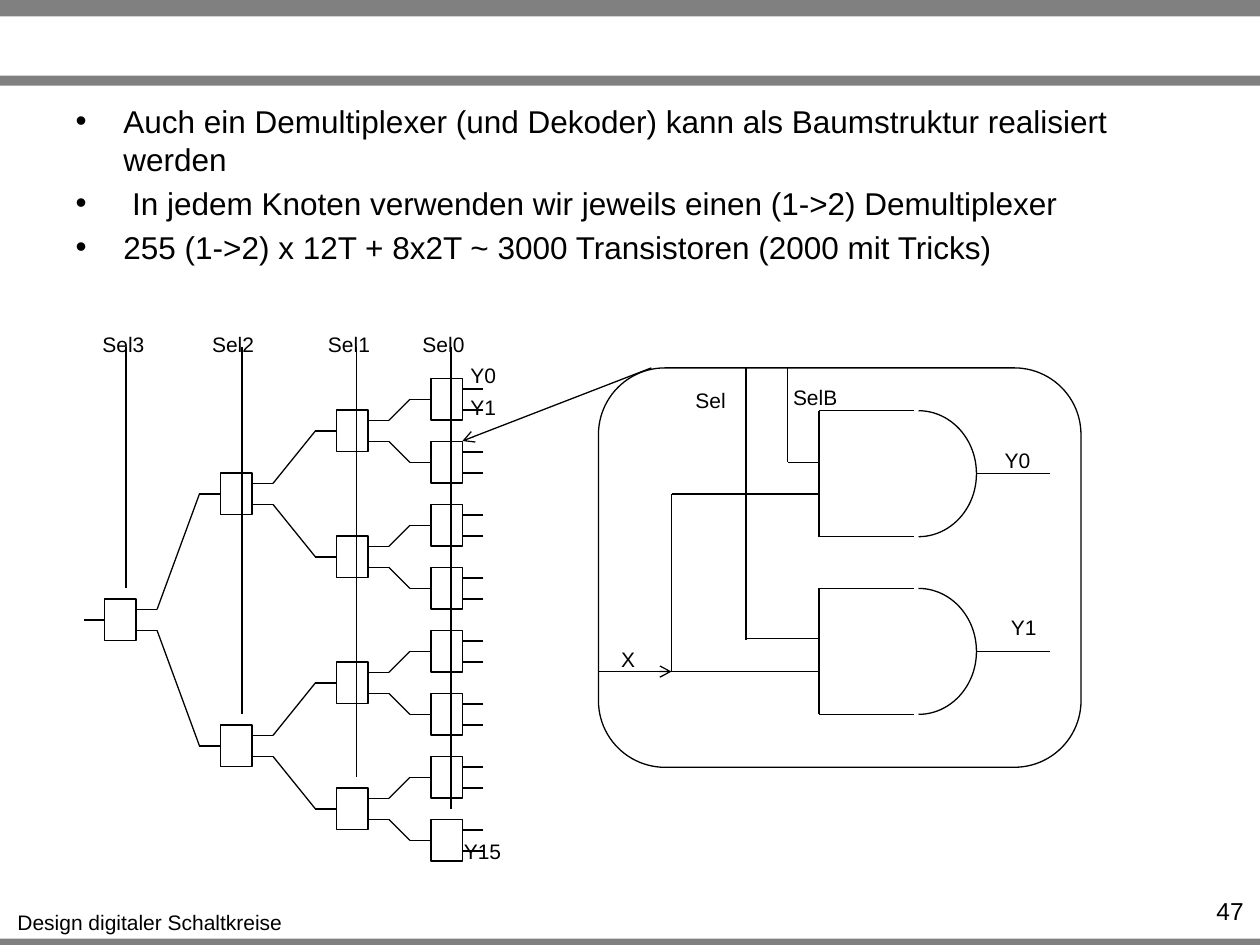
from typing import NamedTuple, Optional

from lxml import etree
from pptx import Presentation
from pptx import util as u
from pptx.dml.color import RGBColor
from pptx.enum import shapes, text
from pptx.oxml.ns import qn

BLACK, GREY = "000000", "808080"
FONT = "Arial"
NODE_WIDTH, NODE_HEIGHT = 0.25, 0.33
STUB = 1 / 6        # length of the short wires at a node
PORT_OFFSET = 1 / 12  # distance of the outputs from the node's middle
TREE_MIDDLE, TREE_SPAN = 4.92, 4.0
SELECT_TOP = 2.75


class Level(NamedTuple):
    """One column of the demultiplexer tree and its select line."""
    left: float
    select_x: float
    select_bottom: float


class Label(NamedTuple):
    words: str
    left: float
    top: float
    width: float


class Wire(NamedTuple):
    x1: float
    y1: float
    x2: float
    y2: float
    arrow: bool = False


LEVELS = [
    Level(0.83, 1.00, 4.67),
    Level(1.75, 1.92, 5.67),
    Level(2.67, 2.83, 6.17),
    Level(3.42, 3.58, 6.42),
]
LABELS = [
    Label("Sel0", 3.25, 2.58, 0.54),
    Label("Sel1", 2.5, 2.58, 0.54),
    Label("Sel2", 1.58, 2.58, 0.54),
    Label("Sel3", 0.71, 2.58, 0.54),
    Label("Y0", 3.63, 2.83, 0.41),
    Label("Y1", 3.63, 3.08, 0.41),
    Label("Y15", 3.58, 6.61, 0.5),
    Label("Sel", 5.42, 3.03, 0.44),
    Label("SelB", 6.19, 3.0, 0.56),
    Label("X", 4.83, 5.08, 0.31),
    Label("Y0", 7.87, 3.5, 0.41),
    Label("Y1", 7.92, 4.83, 0.41),
    Label("Design digitaler Schaltkreise", 0.03, 7.17, 2.32),
]
GATE_TOPS = [3.26, 4.67]
DETAIL_WIRES = [
    Wire(5.92, 5.07, 6.5, 5.07),           # Sel to the lower gate
    Wire(5.92, 5.08, 5.92, 2.92),
    Wire(6.25, 3.67, 6.25, 2.92),          # SelB to the upper gate
    Wire(6.5, 3.67, 6.25, 3.67),
    Wire(4.75, 5.33, 5.33, 5.33, True),    # X to both gates
    Wire(5.33, 5.33, 6.5, 5.33),
    Wire(5.33, 3.92, 5.33, 5.33),
    Wire(5.33, 3.92, 6.5, 3.92),
    Wire(5.17, 2.92, 3.67, 3.5, True),     # callout to a tree node
]
BULLETS = [
    "Auch ein Demultiplexer (und Dekoder) kann als Baumstruktur realisiert werden",
    " In jedem Knoten verwenden wir jeweils einen (1->2) Demultiplexer",
    "255 (1->2) x 12T + 8x2T ~ 3000 Transistoren (2000 mit Tricks)",
]


def color(value: str) -> RGBColor:
    return RGBColor.from_string(value)


def add_run(paragraph, words: str, size: float) -> None:
    run = paragraph.add_run()
    run.text = words
    run.font.name = FONT
    run.font.size = u.Pt(size)
    run.font.color.rgb = color(BLACK)


def add_label(slide, label: Label, size: float = 12, height: float = 0.3,
              align=text.PP_ALIGN.CENTER) -> None:
    box = slide.shapes.add_textbox(u.Inches(label.left), u.Inches(label.top),
                                   u.Inches(label.width), u.Inches(height))
    box.text_frame.word_wrap = False
    paragraph = box.text_frame.paragraphs[0]
    paragraph.alignment = align
    add_run(paragraph, label.words, size)


def add_shape(slide, kind, left: float, top: float, width: float, height: float,
              fill: Optional[str] = None):
    """Filled shape without outline, or an open one with a thin black outline."""
    shape = slide.shapes.add_shape(kind, u.Inches(left), u.Inches(top),
                                   u.Inches(width), u.Inches(height))
    shape.shadow.inherit = False
    if fill:
        shape.fill.solid()
        shape.fill.fore_color.rgb = color(fill)
        shape.line.fill.background()
    else:
        shape.fill.background()
        shape.line.color.rgb = color(BLACK)
        shape.line.width = u.Pt(0.75)
    return shape


def add_wire(slide, wire: Wire):
    connector = slide.shapes.add_connector(
        shapes.MSO_CONNECTOR.STRAIGHT, u.Inches(wire.x1), u.Inches(wire.y1),
        u.Inches(wire.x2), u.Inches(wire.y2))
    connector.line.color.rgb = color(BLACK)
    connector.line.width = u.Pt(0.75)
    properties = connector._element.spPr
    if wire.arrow:
        etree.SubElement(properties.find(qn("a:ln")), qn("a:tailEnd"), type="arrow")
    etree.SubElement(properties, qn("a:effectLst"))
    return connector


def add_node(slide, left: float, middle: float) -> None:
    """A 1->2 demultiplexer with one input and two outputs."""
    node = add_shape(slide, shapes.MSO_SHAPE.RECTANGLE, left,
                     middle - NODE_HEIGHT / 2, NODE_WIDTH, NODE_HEIGHT)
    right = left + NODE_WIDTH
    for y in (middle - PORT_OFFSET, middle + PORT_OFFSET):
        add_wire(slide, Wire(right + STUB, y, right, y))
    input_wire = add_wire(slide, Wire(left, middle, left - STUB, middle))
    input_wire.begin_connect(node, 1)


def node_middles(depth: int) -> list[float]:
    count = 2 ** depth
    gap = TREE_SPAN / count
    return [TREE_MIDDLE + (i - (count - 1) / 2) * gap for i in range(count)]


def add_tree(slide) -> None:
    for depth, level in enumerate(LEVELS):
        for index, middle in enumerate(node_middles(depth)):
            add_node(slide, level.left, middle)
            if depth:
                parent = node_middles(depth - 1)[index // 2]
                port = parent + (PORT_OFFSET if index % 2 else -PORT_OFFSET)
                port_x = LEVELS[depth - 1].left + NODE_WIDTH + STUB
                add_wire(slide, Wire(level.left - STUB, middle, port_x, port))
    for level in LEVELS:
        add_wire(slide, Wire(level.select_x, SELECT_TOP,
                             level.select_x, level.select_bottom))


def add_and_gate(slide, top: float) -> None:
    left, bottom, middle = 6.5, top + 1, top + 0.5
    add_wire(slide, Wire(left, top, left, bottom))
    for y in (top, bottom):
        add_wire(slide, Wire(left, y, 7.25, y))
    arc = add_shape(slide, shapes.MSO_SHAPE.ARC, 6.83, top, 0.92, 1)
    arc.adjustments[0], arc.adjustments[1] = 162, 54  # from top round to bottom
    add_wire(slide, Wire(7.75, middle, 8.33, middle))


def fill_body(body) -> None:
    body.left, body.top = u.Inches(0.5), u.Inches(0.76)
    body.width, body.height = u.Inches(9), u.Inches(0.74)
    frame = body.text_frame
    frame.auto_size = text.MSO_AUTO_SIZE.NONE
    frame.vertical_anchor = text.MSO_ANCHOR.TOP
    for index, words in enumerate(BULLETS):
        paragraph = frame.add_paragraph() if index else frame.paragraphs[0]
        properties = paragraph._p.get_or_add_pPr()
        properties.set("marL", str(u.Inches(0.38)))
        properties.set("indent", str(u.Inches(-0.38)))
        etree.SubElement(properties, qn("a:buChar"), char="•")
        paragraph.space_before = u.Pt(3.6 if index else 0)
        add_run(paragraph, words, 18)


def main() -> None:
    presentation = Presentation()
    presentation.slide_width, presentation.slide_height = u.Inches(10), u.Inches(7.5)
    slide = presentation.slides.add_slide(presentation.slide_layouts[1])
    title = slide.shapes.title._element
    title.getparent().remove(title)

    # Grey bands of the page frame
    for top, height in ((7.45, 0.05), (0, 0.13), (0.6, 0.08)):
        add_shape(slide, shapes.MSO_SHAPE.RECTANGLE, 0, top, 10, height, GREY)
    fill_body(slide.placeholders[1])

    # Tree on the left, inside of one node on the right
    add_tree(slide)
    add_shape(slide, shapes.MSO_SHAPE.ROUNDED_RECTANGLE, 4.75, 2.92, 3.83, 3.17)
    for top in GATE_TOPS:
        add_and_gate(slide, top)
    for wire in DETAIL_WIRES:
        add_wire(slide, wire)

    # Labels and page number
    for label in LABELS:
        add_label(slide, label)
    add_label(slide, Label("47", 9.1, 7.06, 0.87), 14, 0.24, text.PP_ALIGN.RIGHT)
    presentation.save("out.pptx")


if __name__ == "__main__":
    main()
